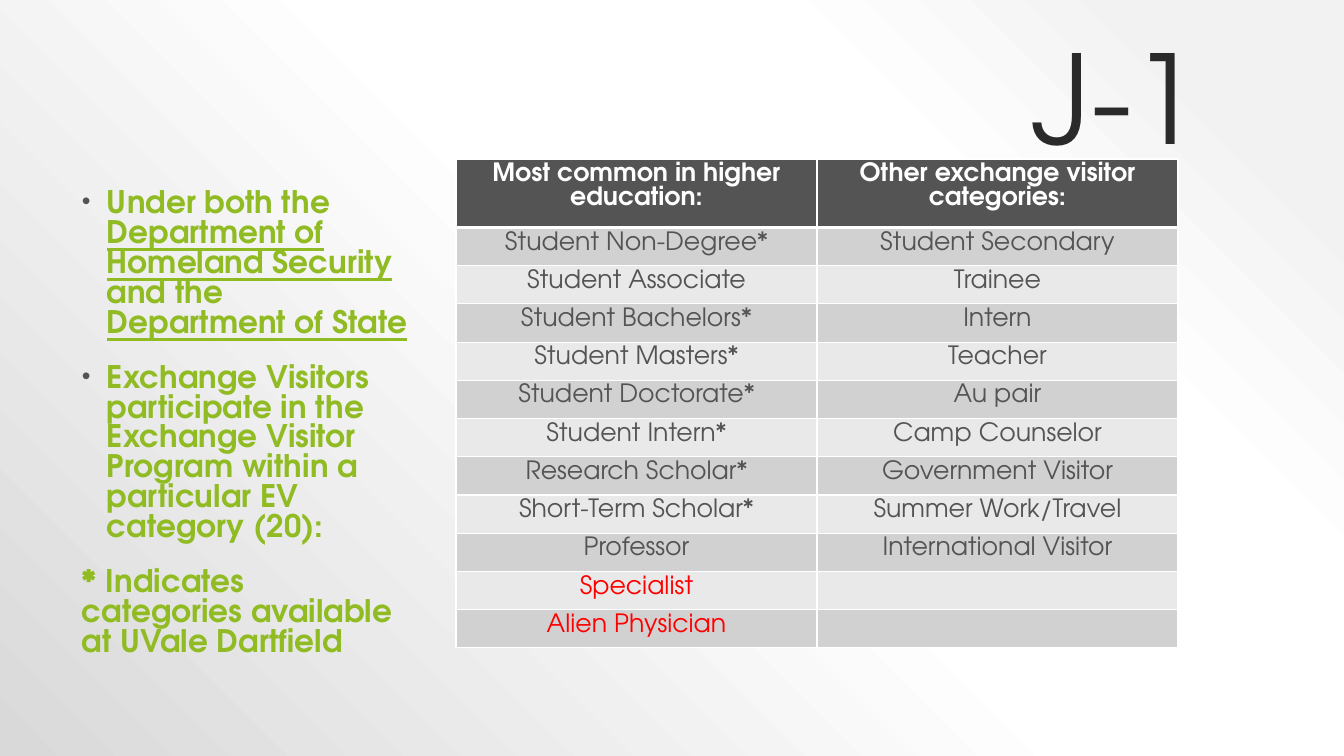
from lxml import etree
from pptx import Presentation
from pptx.dml.color import RGBColor
from pptx.enum.text import MSO_ANCHOR, PP_ALIGN
from pptx.oxml import parse_xml
from pptx.oxml.ns import nsdecls, qn
from pptx.util import Pt

PX = 9072
FONT = "TeX Gyre Adventor"
WHITE = RGBColor(0xFF, 0xFF, 0xFF)
INK = RGBColor(0x2A, 0x2A, 0x2A)
GRAY = RGBColor(0x54, 0x54, 0x54)
GREEN = RGBColor(0x90, 0xBB, 0x23)
RED = RGBColor(0xFF, 0x00, 0x00)
BANDS = (RGBColor(0xE9, 0xE9, 0xE9), RGBColor(0xD1, 0xD1, 0xD1))
BACKGROUND_STOPS = ((10, "F2F2F2"), (28, "FFFFFF"), (48, "FFFFFF"), (100, "D9D9D9"))

NOTES = [
    (True, [("Under both the ", False), ("Department of Homeland Security ", True),
            ("and the ", False), ("Department of State", True)]),
    (True, [("Exchange Visitors participate in the Exchange Visitor Program "
             "within a particular EV category (20):", False)]),
    (False, [("* Indicates categories available at UVale Dartfield", False)]),
]
CATEGORIES = [
    ("Most common in higher education:", "Other exchange visitor categories:"),
    ("Student Non-Degree*", "Student Secondary"),
    ("Student Associate", "Trainee"),
    ("Student Bachelors*", "Intern"),
    ("Student Masters*", "Teacher"),
    ("Student Doctorate*", "Au pair"),
    ("Student Intern*", "Camp Counselor"),
    ("Research Scholar*", "Government Visitor"),
    ("Short-Term Scholar*", "Summer Work/Travel"),
    ("Professor", "International Visitor"),
    ("Specialist", ""),
    ("Alien Physician", ""),
]
HIGHLIGHTED = ("Specialist", "Alien Physician")


def style(paragraph, size, color, bold=False, spacing=1.0):
    """Set the font and line spacing of a paragraph."""
    paragraph.line_spacing = spacing
    font = paragraph.font
    font.name, font.size, font.bold = FONT, Pt(size), bold
    font.color.rgb = color


def paint_background(slide):
    """Fill the slide with a radial gradient centred on the top right corner."""
    slide.background.fill.gradient()
    gradient = slide.element.find(".//" + qn("a:gradFill"))
    stops = "".join(f'<a:gs pos="{position * 1000}"><a:srgbClr val="{color}"/></a:gs>'
                    for position, color in BACKGROUND_STOPS)
    gradient.getparent().replace(gradient, parse_xml(
        f'<a:gradFill {nsdecls("a")} rotWithShape="1"><a:gsLst>{stops}</a:gsLst>'
        '<a:path path="circle"><a:fillToRect l="100000" b="100000"/></a:path></a:gradFill>'))


def add_text_frame(slide, box):
    """Add a wrapping text box and return its text frame."""
    frame = slide.shapes.add_textbox(*(length * PX for length in box)).text_frame
    frame.word_wrap = True
    return frame


def add_title(slide, box, text):
    """Place the title at the bottom right of its box."""
    frame = add_text_frame(slide, box)
    frame.vertical_anchor = MSO_ANCHOR.BOTTOM
    paragraph = frame.paragraphs[0]
    paragraph.text = text
    paragraph.alignment = PP_ALIGN.RIGHT
    style(paragraph, 88, INK, spacing=0.9)


def set_bullet(paragraph, bulleted):
    """Indent a paragraph and give it a bullet if wanted."""
    properties = paragraph._p.get_or_add_pPr()
    properties.set("marL", str((30 if bulleted else 5) * PX))
    properties.set("indent", str((-25 if bulleted else 0) * PX))
    marks = (f'<a:buClr {nsdecls("a")}><a:srgbClr val="{GRAY}"/></a:buClr>',
             f'<a:buSzPct {nsdecls("a")} val="80000"/>',
             f'<a:buFont {nsdecls("a")} typeface="Arial"/>',
             f'<a:buChar {nsdecls("a")} char="•"/>') if bulleted else (
                 f'<a:buNone {nsdecls("a")}/>',)
    defaults = properties.find(qn("a:defRPr"))
    for mark in marks:
        defaults.addprevious(parse_xml(mark))


def add_notes(slide, box):
    """Place the green notes in the left column."""
    frame = add_text_frame(slide, box)
    for index, (bulleted, pieces) in enumerate(NOTES):
        paragraph = frame.add_paragraph() if index else frame.paragraphs[0]
        for text, underlined in pieces:
            run = paragraph.add_run()
            run.text = text
            run.font.underline = underlined
        style(paragraph, 22.2, GREEN, bold=True, spacing=0.8)
        paragraph.space_before = Pt(18)
        set_bullet(paragraph, bulleted)


def set_borders(cell, bottom_width):
    """Draw white borders round a cell."""
    properties = cell._tc.get_or_add_tcPr()
    widths = {"lnL": 1, "lnR": 1, "lnT": 1, "lnB": bottom_width}
    for index, (side, width) in enumerate(widths.items()):
        line = etree.Element(qn(f"a:{side}"), w=str(Pt(width)))
        fill = etree.SubElement(line, qn("a:solidFill"))
        etree.SubElement(fill, qn("a:srgbClr"), val=str(WHITE))
        properties.insert(index, line)


def fill_cell(cell, text, fill_color, header):
    """Write one centred text into a filled cell."""
    cell.fill.solid()
    cell.fill.fore_color.rgb = fill_color
    cell.margin_top = cell.margin_bottom = 4 * PX
    set_borders(cell, 3 if header else 1)
    paragraph = cell.text_frame.paragraphs[0]
    paragraph.text = text
    paragraph.alignment = PP_ALIGN.CENTER
    color = WHITE if header else RED if text in HIGHLIGHTED else GRAY
    style(paragraph, 18, color, bold=header)
    if not text:
        paragraph._p.append(parse_xml(
            f'<a:endParaRPr {nsdecls("a")} sz="1800"><a:latin typeface="{FONT}"/></a:endParaRPr>'))


def add_categories(slide, box, header_height):
    """Place the banded table of visitor categories."""
    left, top, width, height = (length * PX for length in box)
    table = slide.shapes.add_table(len(CATEGORIES), 2, left, top, width, height).table
    row_height = (height - header_height * PX) // (len(CATEGORIES) - 1)
    for row_index, texts in enumerate(CATEGORIES):
        header = row_index == 0
        row = table.rows[row_index]
        row.height = header_height * PX if header else row_height
        for cell, text in zip(row.cells, texts):
            fill_cell(cell, text, GRAY if header else BANDS[row_index % 2], header)


def main():
    """Build the J-1 slide and save it."""
    presentation = Presentation()
    presentation.slide_width, presentation.slide_height = 1344 * PX, 756 * PX
    slide = presentation.slides.add_slide(presentation.slide_layouts[6])
    paint_background(slide)
    add_title(slide, (134, 30, 1076, 146), "J-1")
    add_notes(slide, (67, 185, 353, 496))
    add_categories(slide, (456, 159, 722, 426), 56)
    presentation.save("out.pptx")


if __name__ == "__main__":
    main()
